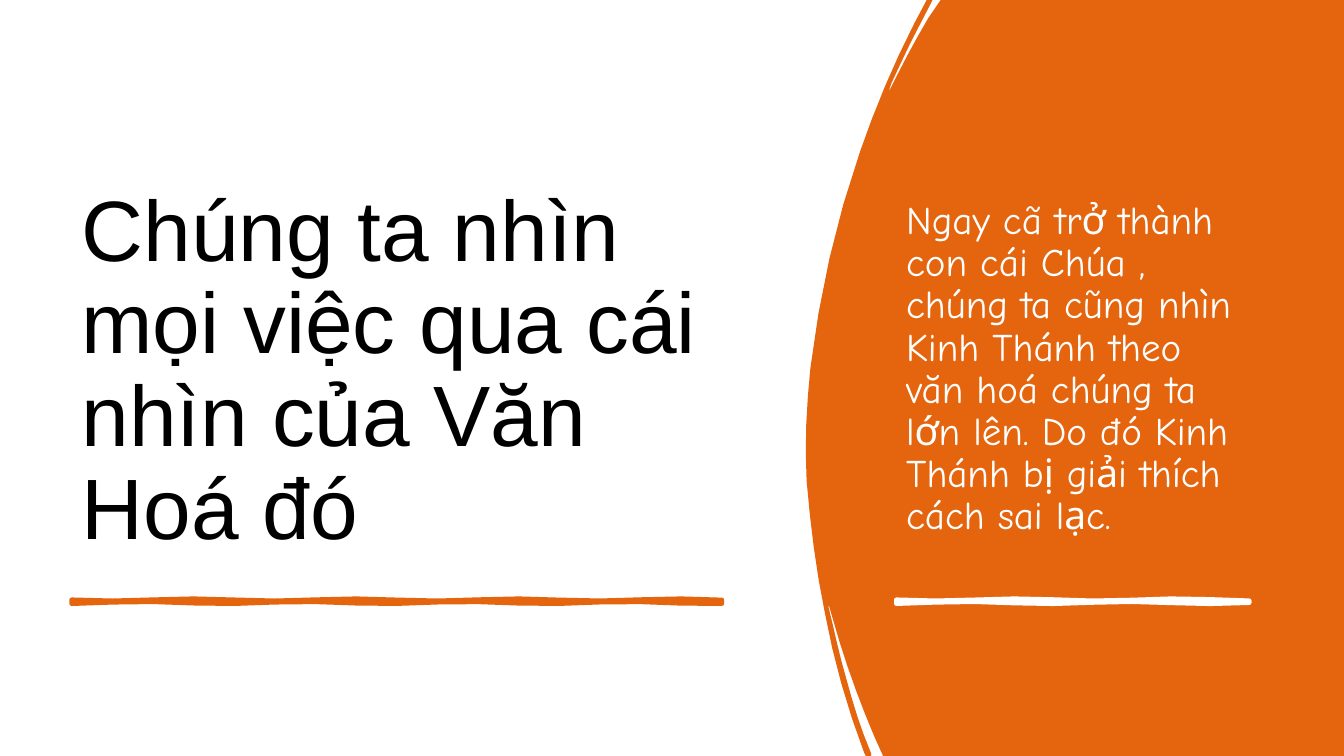
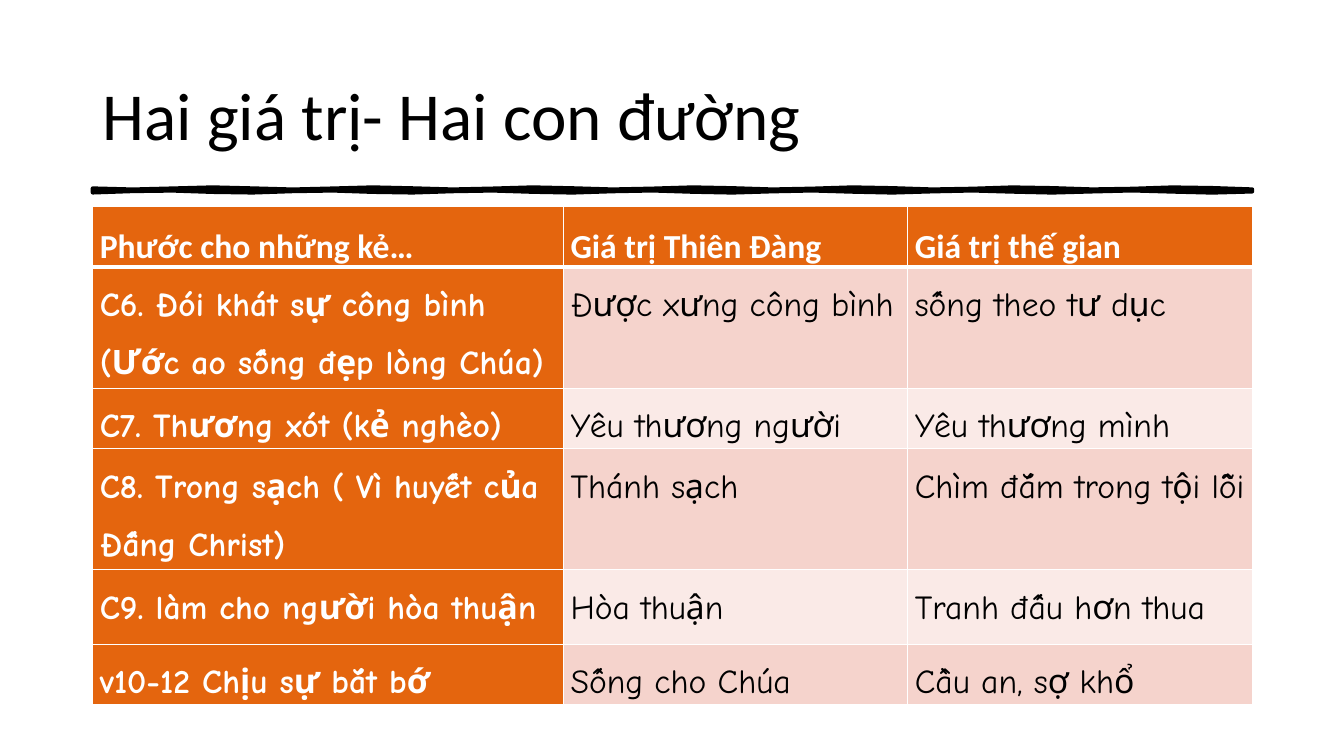
from math import pi, sin

from lxml.etree import SubElement
from pptx import Presentation
from pptx.dml.color import RGBColor
from pptx.enum.lang import MSO_LANGUAGE_ID
from pptx.enum.shapes import MSO_SHAPE
from pptx.enum.text import MSO_ANCHOR
from pptx.oxml.ns import qn
from pptx.util import Inches, Pt

WIDTH, HEIGHT = Inches(13.33), Inches(7.5)
ORANGE, WHITE, BLACK = "E4650E", "FFFFFF", "000000"
BANDS = ("F5D3CC", "FAEAE7")
TITLE_FONT, HEADING_FONT, BODY_FONT = "Arial", "Calibri", "Comic Neue"

BRUSH_EDGE = [
    (22.5, 0), (23.6, 0), (19.9, 5.1),
    (18.5, 7.1, 17.2, 9.1, 15.9, 11.1),
    (15.2, 12.7), (15.5, 12.1),
    (17.8, 8.8, 20.2, 5.5, 22.8, 2.4),
    (25.1, 0), (100, 0), (100, 100), (14.4, 100), (12.7, 97.3),
    (10.3, 93.3, 8.2, 89.2, 6.4, 85.1),
    (4.3, 80), (4.3, 80.4),
    (5.4, 83.5, 6.2, 86.5, 7.5, 89.6),
    (8.8, 93.1, 10.3, 96.5, 12.2, 99.7),
    (12.2, 100), (11.2, 100), (10.9, 99.6),
    (7.7, 93.6, 5.2, 87.3, 3.6, 81.1),
    (1.9, 75.3, 0.9, 69.5, 0.2, 63.6),
    (-0.2, 58.7, 0.2, 53.6, 0.9, 48.7),
    (2.6, 38.9, 5.6, 29.3, 10.1, 20.1),
    (12.9, 14.3, 16.3, 8.5, 20.2, 3.1),
]

VALUES = [
    ("Phước cho những kẻ…", "Giá trị Thiên Đàng", "Giá trị thế gian"),
    ("C6. Đói khát sự công bình (Ước ao sống đẹp lòng Chúa)",
     "Được xưng công bình", "sống theo tư dục"),
    ("C7. Thương xót (kẻ nghèo)", "Yêu thương người", "Yêu thương mình"),
    ("C8. Trong sạch ( Vì huyết của Đấng Christ)",
     "Thánh sạch", "Chìm đắm trong tội lỗi"),
    ("C9. làm cho người hòa thuận", "Hòa thuận", "Tranh đấu hơn thua"),
    ("v10-12 Chịu sự bắt bớ", "Sống cho Chúa", "Cầu an, sợ khổ"),
]
COLUMN_WIDTHS = (35.03, 25.62, 25.62)
ROW_HEIGHTS = (6.93, 6.93, 6.93, 6.93, 9.87, 6.93)


def color(value):
    return RGBColor.from_string(value)


def area(left, top, width, height):
    return (int(WIDTH * left / 100), int(HEIGHT * top / 100),
            int(WIDTH * width / 100), int(HEIGHT * height / 100))


def write(frame, words, *, size, font, ink, bold=False, spacing=1.0, before=0):
    frame.word_wrap = True
    paragraph = frame.paragraphs[0]
    paragraph.line_spacing = spacing
    paragraph.space_before = Pt(before)
    run = paragraph.add_run()
    run.text = words
    run.font.size = Pt(size)
    run.font.name = font
    run.font.bold = bold
    run.font.language_id = MSO_LANGUAGE_ID.VIETNAMESE
    run.font.color.rgb = color(ink)
    end = SubElement(paragraph._p, qn("a:endParaRPr"), sz=str(int(size * 100)))
    SubElement(end, qn("a:latin"), typeface=font)


def add_text(slide, box, words, anchor, **style):
    frame = slide.shapes.add_textbox(*box).text_frame
    frame.vertical_anchor = anchor
    write(frame, words, **style)


def paint(shape, fill, line_width=0):
    shape.shadow.inherit = False
    shape.fill.solid()
    shape.fill.fore_color.rgb = color(fill)
    if line_width:
        shape.line.color.rgb = color(fill)
        shape.line.width = Pt(line_width)
    else:
        shape.line.fill.background()


def add_outline(slide, points, fill, line_width=0):
    builder = slide.shapes.build_freeform(*points[0])
    builder.add_line_segments(points[1:], close=True)
    paint(builder.convert_to_shape(), fill, line_width)


def curve(start, step, pieces=4):
    corners = [start, step[:2], step[2:4], step[4:]]
    weights = (1, 3, 3, 1)
    for piece in range(1, pieces + 1):
        t = piece / pieces
        yield tuple(
            sum(w * (1 - t) ** (3 - i) * t ** i * corner[axis]
                for i, (w, corner) in enumerate(zip(weights, corners)))
            for axis in (0, 1))


def brush_panel(slide, box, fill):
    left, top, width, height = box
    points = []
    for step in BRUSH_EDGE:
        points.extend([step] if len(step) == 2 else curve(points[-1], step))
    add_outline(slide, [(int(left + width * x / 100), int(top + height * y / 100))
                        for x, y in points], fill)


def brush_stroke(slide, box, ink, line_width=3.25):
    left, top, width, height = box
    pieces = round(width / Inches(0.4))
    waves = width / Inches(1.6)

    def edge(base, phase):
        return [(int(left + width * i / pieces),
                 int(base + height * 0.35 * sin(2 * pi * waves * i / pieces + phase)))
                for i in range(pieces + 1)]

    add_outline(slide, edge(top, 0) + edge(top + height, 2)[::-1], ink, line_width)


def border(cell, side, width):
    line = SubElement(cell._tc.get_or_add_tcPr(), qn(f"a:ln{side}"), w=str(Pt(width)))
    SubElement(SubElement(line, qn("a:solidFill")), qn("a:srgbClr"), val=WHITE)


def value_table(slide, box):
    frame = slide.shapes.add_table(len(VALUES), len(COLUMN_WIDTHS), *box)
    table = frame.table
    table.horz_banding = False
    for column, share in zip(table.columns, COLUMN_WIDTHS):
        column.width = int(WIDTH * share / 100)
    for row, share in zip(table.rows, ROW_HEIGHTS):
        row.height = int(HEIGHT * share / 100)
    frame.height = box[3]
    for r, entries in enumerate(VALUES):
        for c, words in enumerate(entries):
            cell = table.cell(r, c)
            heading = r == 0 or c == 0
            cell.margin_left = cell.margin_right = Inches(0.07)
            cell.margin_top = cell.margin_bottom = 0
            for side in "LRTB":
                under_header = (r, side) in ((0, "B"), (1, "T"))
                border(cell, side, 3 if under_header else 1)
            cell.fill.solid()
            cell.fill.fore_color.rgb = color(ORANGE if heading else BANDS[(r - 1) % 2])
            write(cell.text_frame, words, size=24, bold=heading,
                  font=HEADING_FONT if r == 0 else BODY_FONT,
                  ink=WHITE if heading else BLACK, spacing=1.5, before=6)


def statement_slide(slide):
    backdrop = slide.shapes.add_shape(MSO_SHAPE.RECTANGLE, *area(0, 0, 100, 100))
    paint(backdrop, WHITE)
    add_text(slide, area(5.33, 18.93, 48.38, 55.47),
             "Chúng ta nhìn mọi việc qua cái nhìn của Văn Hoá đó",
             MSO_ANCHOR.BOTTOM, size=61.2, font=TITLE_FONT, ink=BLACK, spacing=0.9)
    brush_panel(slide, area(59.94, 0, 40.06, 100), ORANGE)
    add_text(slide, area(66.69, 16.4, 26.48, 55.47),
             "Ngay cã trở thành con cái Chúa , chúng ta cũng nhìn Kinh Thánh theo "
             "văn hoá chúng ta lớn lên. Do đó Kinh Thánh bị giải thích cách sai lạc.",
             MSO_ANCHOR.BOTTOM, size=27.9, font=BODY_FONT, ink=WHITE,
             spacing=0.9, before=10)
    brush_stroke(slide, area(5.33, 79.33, 48.38, 0.4), ORANGE)
    brush_stroke(slide, area(66.69, 79.33, 26.26, 0.4), WHITE)


def comparison_slide(slide):
    brush_stroke(slide, area(6.9, 24.93, 86.27, 0.4), BLACK, 3)
    add_text(slide, area(6.9, 5.33, 86.27, 19.33), "Hai giá trị- Hai con đường",
             MSO_ANCHOR.MIDDLE, size=48, font=HEADING_FONT, ink=BLACK)
    value_table(slide, area(6.9, 27.33, 86.27, 62.53))


def main():
    deck = Presentation()
    deck.slide_width, deck.slide_height = WIDTH, HEIGHT
    for build in (statement_slide, comparison_slide):
        build(deck.slides.add_slide(deck.slide_layouts[6]))
    deck.save("out.pptx")


if __name__ == "__main__":
    main()
